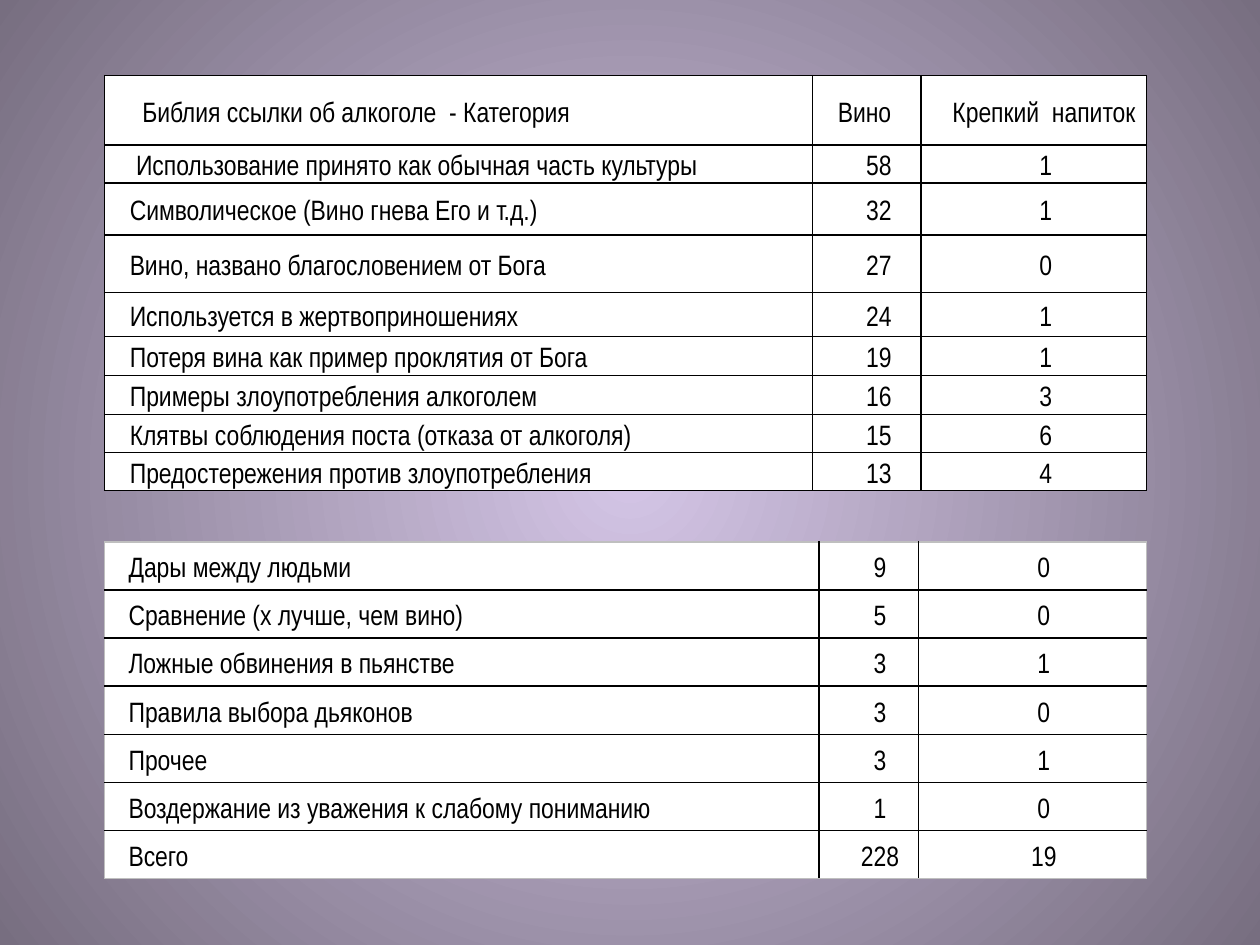
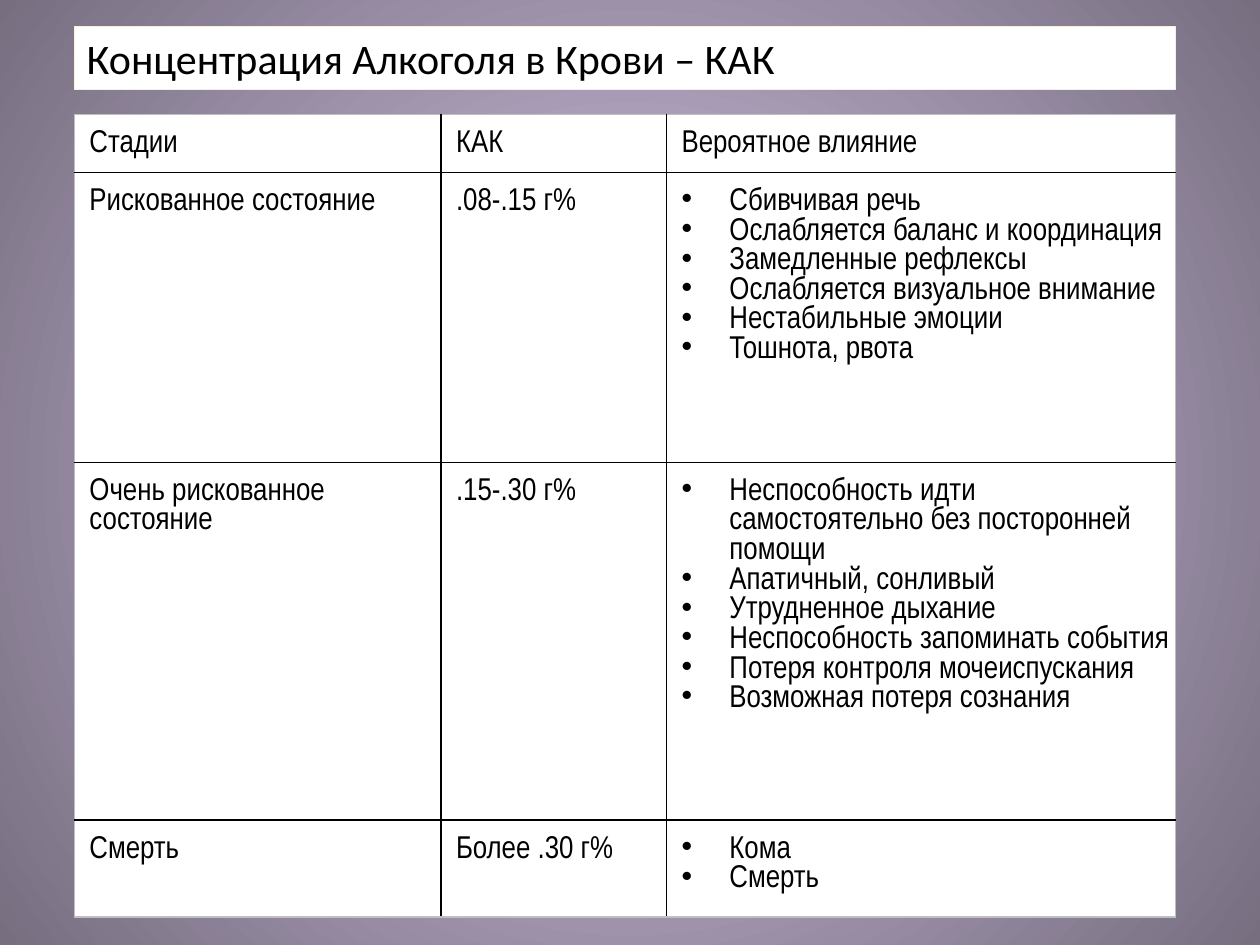
from dataclasses import dataclass
from typing import NamedTuple, Optional

from pptx import Presentation
from pptx.dml.color import RGBColor
from pptx.enum.shapes import MSO_SHAPE as Shape
from pptx.enum.text import MSO_ANCHOR as Anchor, PP_ALIGN as Align
from pptx.oxml.ns import qn
from pptx.oxml.xmlchemy import OxmlElement as element
from pptx.util import Inches, Pt

# Shared look
WHITE, BLACK, EDGE, CREAM = "FFFFFF", "000000", "BFBFBF", "F5F1E0"
GLOW, DUSK = "D4C5E6", "776E80"
BODY_FONT, TITLE_FONT = "Arial Narrow", "Calibri"

# The slide is a grid of 100 columns by 75 rows
SLIDE_WIDTH, SLIDE_HEIGHT = Inches(10), Inches(7.5)
UNIT = SLIDE_WIDTH // 100


class Insets(NamedTuple):
    left: float
    top: float
    right: float
    bottom: float


class Entry(NamedTuple):
    """Cell text: one line or several, with its own extra indent."""
    lines: tuple[str, ...]
    align: Align = Align.LEFT
    shift: float = 0
    bullets: bool = False


@dataclass
class Grid:
    left: float
    top: float
    columns: list[float]
    rows: list[float]
    entries: list[list[Entry]]
    insets: Insets
    size: int = 16
    indent: float = 0
    spacing: Optional[float] = None
    anchor: Anchor = Anchor.TOP
    outer: str = BLACK


def units(count: float) -> int:
    return round(count * UNIT)


def colour(code: str) -> RGBColor:
    return RGBColor.from_string(code)


def write(frame, lines, *, size, font=BODY_FONT, align=Align.LEFT,
          margin=0.0, indent=0.0, spacing=None, bullets=False) -> None:
    frame.word_wrap = True
    for number, line in enumerate(lines):
        paragraph = frame.add_paragraph() if number else frame.paragraphs[0]
        paragraph.alignment = align
        if spacing:
            paragraph.line_spacing = spacing
        run = paragraph.add_run()
        run.text = line
        run.font.size, run.font.name = Pt(size), font
        run.font.color.rgb = colour(BLACK)
        # Indents and bullet sign
        layout = paragraph._p.get_or_add_pPr()
        layout.set("marL", str(units(margin)))
        layout.set("indent", str(units(indent)))
        if bullets:
            bullet = element("a:buChar")
            bullet.set("char", "•")
            layout.append(bullet)


def draw_border(cell, side: str, code: str) -> None:
    line, fill, ink = (element(tag) for tag in
                       (f"a:ln{side}", "a:solidFill", "a:srgbClr"))
    line.set("w", str(Pt(1)))
    ink.set("val", code)
    fill.append(ink)
    line.append(fill)
    cell._tc.get_or_add_tcPr().append(line)


def draw_grid(slide, grid: Grid) -> None:
    row_count, column_count = len(grid.rows), len(grid.columns)
    table = slide.shapes.add_table(
        row_count, column_count, units(grid.left), units(grid.top),
        units(sum(grid.columns)), units(sum(grid.rows))).table
    table.first_row = table.horz_banding = False
    for column, width in zip(table.columns, grid.columns):
        column.width = units(width)
    for row, height in zip(table.rows, grid.rows):
        row.height = units(height)

    for r, entries in enumerate(grid.entries):
        for c, entry in enumerate(entries):
            cell = table.cell(r, c)
            outside = {"L": c == 0, "R": c == column_count - 1,
                       "T": r == 0, "B": r == row_count - 1}
            for side, is_outer in outside.items():
                draw_border(cell, side, grid.outer if is_outer else BLACK)
            cell.fill.solid()
            cell.fill.fore_color.rgb = colour(WHITE)
            cell.vertical_anchor = grid.anchor
            (cell.margin_left, cell.margin_top, cell.margin_right,
             cell.margin_bottom) = map(units, grid.insets)
            hang = 3.8 if entry.bullets else 0
            write(cell.text_frame, entry.lines, size=grid.size,
                  align=entry.align, margin=hang,
                  indent=grid.indent + entry.shift - hang,
                  spacing=grid.spacing, bullets=entry.bullets)


def draw_title(slide, text: str) -> None:
    title = slide.shapes.add_shape(Shape.RECTANGLE, units(5.9), units(2.1),
                                   units(87.4), units(5))
    title.shadow.inherit = False
    title.fill.solid()
    title.fill.fore_color.rgb = colour(WHITE)
    title.line.color.rgb = colour(CREAM)
    title.line.width = Pt(0.75)
    write(title.text_frame, [text], size=24, font=TITLE_FONT)


def paint_background(master) -> None:
    """Give every slide a round glow from its centre."""
    fill = master.background.fill
    fill.gradient()
    for stop, code in zip(fill.gradient_stops, (GLOW, DUSK)):
        stop.color.rgb = colour(code)
    gradient = master.element.find(".//" + qn("a:gradFill"))
    circle, centre = element("a:path"), element("a:fillToRect")
    circle.set("path", "circle")
    for side in "ltrb":
        centre.set(side, "50000")
    circle.append(centre)
    gradient.replace(gradient.find(qn("a:lin")), circle)


def count_row(category: str, wine: int, strong: int,
              shift: float = 0) -> list[Entry]:
    return [Entry((category,), shift=shift),
            Entry((str(wine),), Align.CENTER),
            Entry((str(strong),), Align.CENTER)]


def stage_row(stage: str, level: str, *effects: str) -> list[Entry]:
    return [Entry((stage,)), Entry((level,)), Entry(effects, bullets=True)]


# Bible references to alcohol, by category
COUNT_STYLE = dict(indent=1.9, spacing=1.35, anchor=Anchor.MIDDLE)
REFERENCES = Grid(
    8.3, 6, [56.2, 8.6, 17.9],
    [5.5, 3, 4.15, 4.55, 3.5, 3.1, 3.1, 3, 3],
    [
        [Entry(("Библия ссылки об алкоголе  - Категория",), shift=1),
         Entry(("Вино",)), Entry(("Крепкий  напиток",), shift=0.5)],
        count_row("Использование принято как обычная часть культуры", 58, 1, 0.5),
        count_row("Символическое (Вино гнева Его и т.д.)", 32, 1),
        count_row("Вино, названо благословением от Бога", 27, 0),
        count_row("Используется в жертвоприношениях", 24, 1),
        count_row("Потеря вина как пример проклятия от Бога", 19, 1),
        count_row("Примеры злоупотребления алкоголем", 16, 3),
        count_row("Клятвы соблюдения поста (отказа от алкоголя)", 15, 6),
        count_row("Предостережения против злоупотребления", 13, 4),
    ],
    Insets(0.1, 0.1, 0.1, 0.1), **COUNT_STYLE)

OTHER_REFERENCES = Grid(
    8.3, 43, [56.7, 7.9, 18.1], [3.82] * 7,
    [
        count_row("Дары между людьми", 9, 0),
        count_row("Сравнение (х лучше, чем вино)", 5, 0),
        count_row("Ложные обвинения в пьянстве", 3, 1),
        count_row("Правила выбора дьяконов", 3, 0),
        count_row("Прочее", 3, 1),
        count_row("Воздержание из уважения к слабому пониманию", 1, 0),
        count_row("Всего", 228, 19),
    ],
    Insets(0, 0.1, 0.1, 0.1), outer=EDGE, **COUNT_STYLE)

# Stages of blood alcohol concentration
STAGES = Grid(
    5.9, 9.1, [29.1, 17.9, 40.4], [4.6, 23, 28.4, 7.7],
    [
        [Entry((head,)) for head in ("Стадии", "КАК", "Вероятное влияние")],
        stage_row("Рискованное состояние", ".08-.15 г%",
                  "Сбивчивая речь",
                  "Ослабляется баланс и координация",
                  "Замедленные рефлексы",
                  "Ослабляется визуальное внимание",
                  "Нестабильные эмоции",
                  "Тошнота, рвота"),
        stage_row("Очень рискованное состояние", ".15-.30 г%",
                  "Неспособность идти самостоятельно без посторонней помощи",
                  "Апатичный, сонливый",
                  "Утрудненное дыхание",
                  "Неспособность запоминать события",
                  "Потеря контроля мочеиспускания",
                  "Возможная потеря сознания"),
        stage_row("Смерть", "Более .30 г%", "Кома", "Смерть"),
    ],
    Insets(1.2, 1.2, 0.3, 0.3), size=18, outer=EDGE)


def main() -> None:
    deck = Presentation()
    deck.slide_width, deck.slide_height = SLIDE_WIDTH, SLIDE_HEIGHT
    paint_background(deck.slide_master)
    blank = deck.slide_layouts[6]

    references = deck.slides.add_slide(blank)
    draw_grid(references, REFERENCES)
    draw_grid(references, OTHER_REFERENCES)

    concentration = deck.slides.add_slide(blank)
    draw_title(concentration, "Концентрация Алкоголя в Крови – КАК")
    draw_grid(concentration, STAGES)

    deck.save("out.pptx")


if __name__ == "__main__":
    main()
